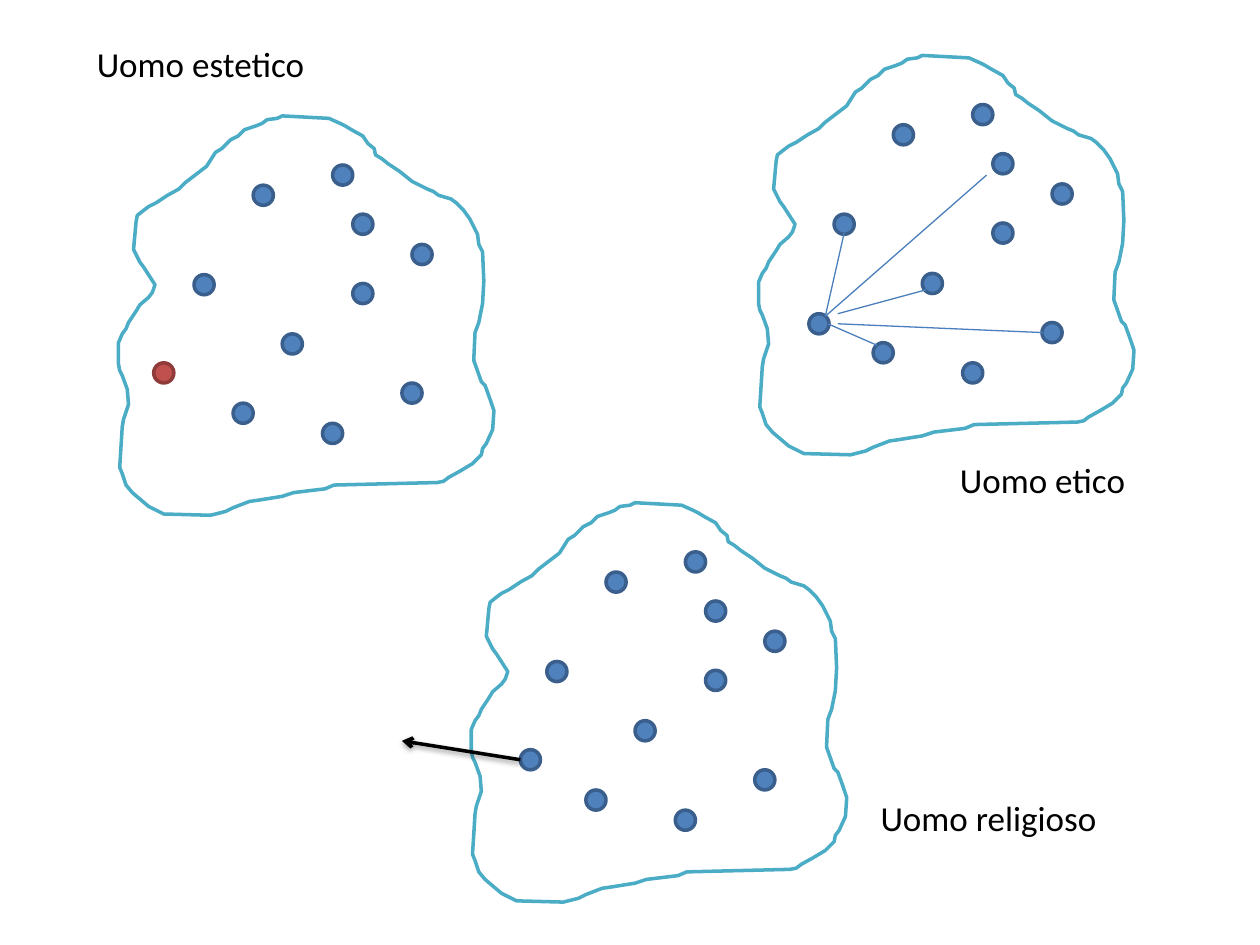
from lxml import etree
from pptx import Presentation
from pptx.dml.color import RGBColor
from pptx.enum.shapes import MSO_CONNECTOR, MSO_SHAPE
from pptx.enum.text import MSO_AUTO_SIZE
from pptx.oxml.ns import qn
from pptx.util import Inches, Pt

OVAL = MSO_SHAPE.OVAL
STRAIGHT = MSO_CONNECTOR.STRAIGHT
FIT_TEXT = MSO_AUTO_SIZE.SHAPE_TO_FIT_TEXT

WHITE = RGBColor(0xFF, 0xFF, 0xFF)
BLACK = RGBColor(0, 0, 0)
TEAL = RGBColor(0x4B, 0xAC, 0xC6)
BLUE = RGBColor(0x4F, 0x81, 0xBD)
DARK_BLUE = RGBColor(0x3A, 0x5F, 0x8C)
LINK_BLUE = RGBColor(0x4B, 0x7E, 0xBC)
RED = RGBColor(0xC0, 0x50, 0x4D)
DARK_RED = RGBColor(0x8E, 0x3B, 0x39)

DOT_SIZE = 0.16
HUNDREDTH = Inches(0.01)
OUTLINE = [
    (29, 134), (20, 120), (17, 116), (12, 106), (14, 84), (15, 79), (20, 75),
    (24, 72), (30, 69), (39, 63), (48, 58), (53, 53), (70, 40), (77, 29),
    (82, 26), (89, 19), (95, 16), (100, 11), (109, 8), (114, 6), (118, 3),
    (126, 2), (130, 0), (167, 2), (176, 6), (180, 8), (185, 11), (194, 16),
    (198, 22), (203, 26), (204, 31), (209, 34), (214, 38), (223, 44),
    (233, 52), (245, 58), (250, 60), (254, 63), (264, 66), (268, 69),
    (274, 75), (279, 82), (285, 94), (286, 102), (289, 108), (290, 131),
    (289, 149), (286, 164), (283, 172), (282, 194), (288, 211), (291, 214),
    (295, 225), (298, 234), (297, 249), (292, 260), (289, 264), (288, 269),
    (281, 276), (271, 282), (262, 287), (258, 290), (253, 291), (171, 293),
    (164, 296), (139, 299), (130, 302), (111, 305), (104, 306), (91, 311),
    (85, 314), (77, 316), (73, 317), (36, 316), (24, 310), (11, 299),
    (6, 293), (3, 284), (1, 279), (3, 247), (4, 241), (8, 229), (7, 217),
    (3, 206), (1, 202), (0, 197), (0, 180), (3, 173), (6, 169), (8, 164),
    (14, 155), (17, 150), (24, 144), (27, 140),
]
OTHERS = [
    (1.07, 0.55), (1.70, 0.39), (1.86, 1.33), (0.60, 1.26), (1.86, 0.78),
    (1.30, 1.73), (2.33, 1.02), (2.25, 2.12), (0.91, 2.28), (1.62, 2.44),
]


def paint(shape, fill, line):
    shape.shadow.inherit = False
    shape.fill.solid()
    shape.fill.fore_color.rgb = fill
    shape.line.color.rgb = line
    shape.line.width = Pt(2)


def add_dot(shapes, left, top, fill=BLUE, line=DARK_BLUE):
    dot = shapes.add_shape(OVAL, Inches(left), Inches(top),
                           Inches(DOT_SIZE), Inches(DOT_SIZE))
    paint(dot, fill, line)


def add_community(slide, left, top):
    community = slide.shapes.add_group_shape().shapes
    builder = community.build_freeform(*OUTLINE[0], scale=HUNDREDTH)
    builder.add_line_segments(OUTLINE[1:], close=True)
    paint(builder.convert_to_shape(Inches(left), Inches(top)), WHITE, TEAL)
    for x, y in OTHERS:
        add_dot(community, left + x, top + y)


def add_label(slide, text, left, top, width=2.2, height=0.44, size=20,
              font="Calibri", color=BLACK):
    label = slide.shapes.add_textbox(Inches(left), Inches(top),
                                     Inches(width), Inches(height))
    label.text_frame.word_wrap = True
    label.text_frame.auto_size = FIT_TEXT
    run = label.text_frame.paragraphs[0].add_run()
    run.text = text
    run.font.size = Pt(size)
    run.font.name = font
    run.font.color.rgb = color


def add_line(slide, start, end, color, width):
    line = slide.shapes.add_connector(STRAIGHT, *map(Inches, start + end))
    line.line.color.rgb = color
    line.line.width = Pt(width)
    effects = etree.SubElement(line._element.spPr, qn("a:effectLst"))
    return line, effects


def add_aesthetic_man(slide, left, top):
    add_community(slide, left, top)
    add_dot(slide.shapes, left + 0.28, top + 1.96, RED, DARK_RED)
    add_label(slide, "Uomo estetico", left - 0.27, top - 0.63)


def add_ethical_man(slide, left, top):
    add_community(slide, left, top)
    add_dot(slide.shapes, left + 0.4, top + 2.05)
    relations = [
        ((0.53, 2.07), (0.68, 1.41)),
        ((0.53, 2.07), (1.81, 0.95)),
        ((0.63, 2.13), (2.26, 2.20)),
        ((0.63, 2.05), (1.33, 1.86)),
        ((0.55, 2.13), (0.94, 2.30)),
    ]
    for (x1, y1), (x2, y2) in relations:
        add_line(slide, (left + x1, top + y1), (left + x2, top + y2),
                 LINK_BLUE, 0.75)
    add_label(slide, "Uomo etico", left + 1.5, top + 3.15)


def add_religious_man(slide, left, top):
    add_community(slide, left, top)
    add_dot(slide.shapes, left + 0.39, top + 1.96)
    leap, effects = add_line(slide, (left + 0.39, top + 2.04),
                             (left - 0.55, top + 1.89), BLACK, 2)
    etree.SubElement(leap.line._get_or_add_ln(), qn("a:tailEnd"), type="arrow")
    shadow = etree.SubElement(effects, qn("a:outerShdw"), blurRad="40000",
                              dist="20000", dir="5400000", rotWithShape="0")
    shade = etree.SubElement(shadow, qn("a:srgbClr"), val=str(BLACK))
    etree.SubElement(shade, qn("a:alpha"), val="38000")
    add_label(slide, "Uomo religioso", left + 3.15, top + 2.28)


def main():
    prs = Presentation()
    prs.slide_width, prs.slide_height = Inches(10), Inches(7.5)
    slide = prs.slides.add_slide(prs.slide_layouts[6])
    add_aesthetic_man(slide, 0.94, 0.92)
    add_religious_man(slide, 3.74, 3.99)
    add_ethical_man(slide, 6.02, 0.44)
    prs.save("out.pptx")


if __name__ == "__main__":
    main()
